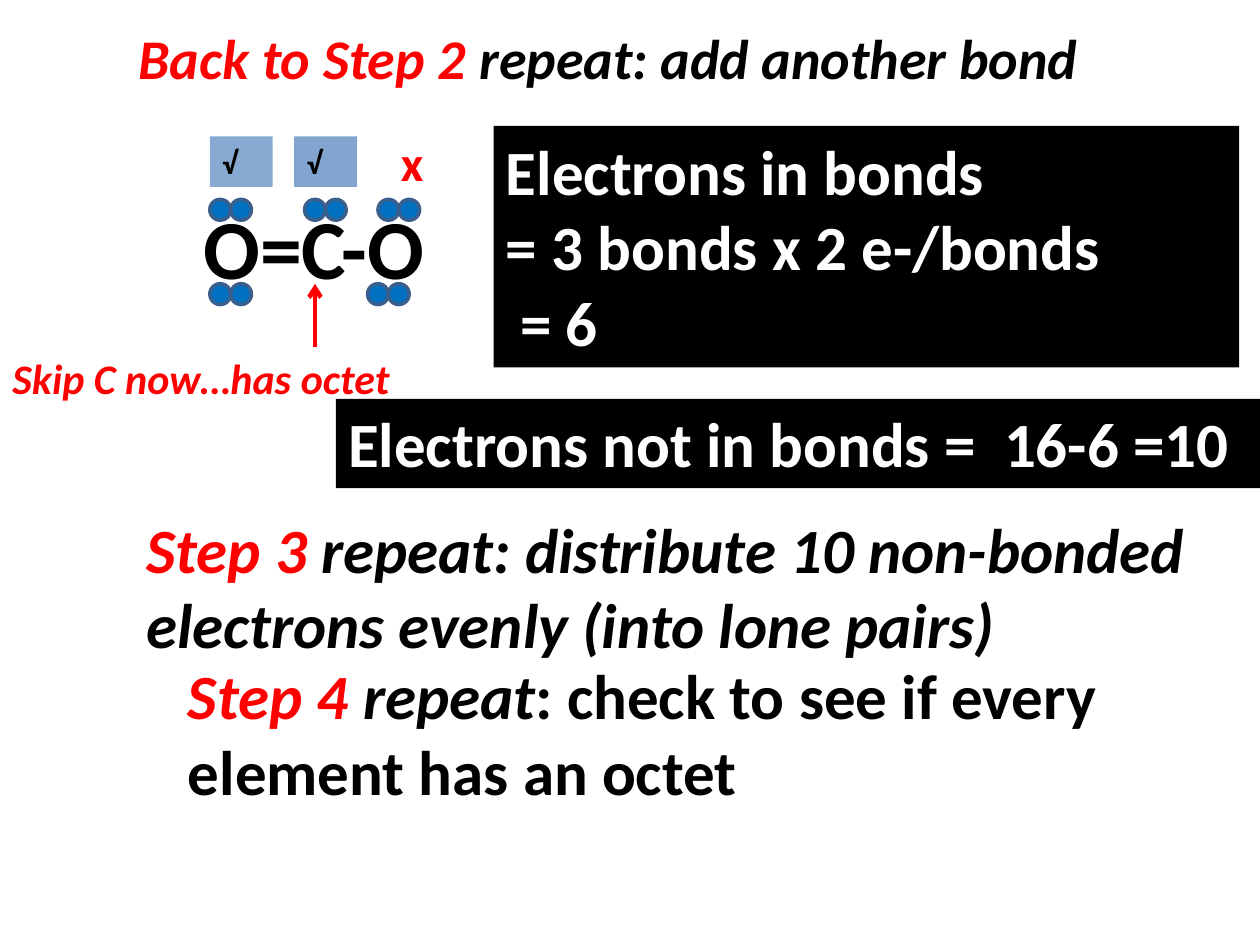
from dataclasses import dataclass

from lxml.etree import SubElement
from pptx import Presentation
from pptx.dml.color import RGBColor
from pptx.enum.shapes import MSO_CONNECTOR as Connector, MSO_SHAPE as Shape
from pptx.enum.text import MSO_ANCHOR as Anchor, MSO_AUTO_SIZE as AutoSize, PP_ALIGN as Align
from pptx.oxml.ns import qn
from pptx.util import Cm, Pt


@dataclass(frozen=True)
class Theme:
    font: str = "Calibri"
    ink: str = "000000"
    paper: str = "FFFFFF"
    accent: str = "FF0000"
    electron: str = "0070C0"
    electron_edge: str = "3A5F8C"
    check: str = "4F81BD"
    formula_size: int = 48
    body_size: int = 36
    title_size: int = 32
    cross_size: int = 28
    note_size: int = 24
    check_size: int = 18


@dataclass(frozen=True)
class Box:
    left: float
    top: float
    width: float
    height: float

    def inner(self, left, top, width, height):
        return Box(self.left + left, self.top + top, width, height)

    def lengths(self):
        return [Cm(v) for v in (self.left, self.top, self.width, self.height)]


THEME = Theme()


def rgb(color):
    return RGBColor.from_string(color)


def write(frame, lines, size, italic=False, anchor=Anchor.TOP):
    frame.word_wrap = True
    frame.auto_size = AutoSize.NONE
    frame.vertical_anchor = anchor
    for index, runs in enumerate(lines):
        paragraph = frame.add_paragraph() if index else frame.paragraphs[0]
        paragraph.alignment = Align.LEFT
        font = paragraph.font
        font.name, font.size, font.bold, font.italic = THEME.font, Pt(size), True, italic
        for text, color, *upright in runs:
            run = paragraph.add_run()
            run.text = text
            run.font.color.rgb = rgb(color)
            if upright:
                run.font.italic = False


def add_text(slide, box, lines, size, italic=False):
    text_box = slide.shapes.add_textbox(*box.lengths())
    write(text_box.text_frame, lines, size, italic)
    return text_box


def add_filled(slide, kind, box, color):
    shape = slide.shapes.add_shape(kind, *box.lengths())
    shape.shadow.inherit = False
    shape.fill.solid()
    shape.fill.fore_color.rgb = rgb(color)
    shape.line.fill.background()
    return shape


def add_title(slide, box):
    title = slide.shapes.title
    title.left, title.top, title.width, title.height = box.lengths()
    write(title.text_frame,
          [[("Back to Step 2 ", THEME.accent), ("repeat: add another bond", THEME.ink)]],
          THEME.title_size, italic=True)


def add_panel(slide, box, lines):
    panel = add_filled(slide, Shape.RECTANGLE, box, THEME.ink)
    write(panel.text_frame, [[(line, THEME.paper)] for line in lines], THEME.body_size)


def add_lone_pair(slide, box):
    for side in range(2):
        electron = add_filled(slide, Shape.OVAL,
                              box.inner(side * box.height, 0, box.height, box.height),
                              THEME.electron)
        electron.line.color.rgb = rgb(THEME.electron_edge)
        electron.line.width = Pt(2)


def add_check(slide, box, opacity):
    check = add_filled(slide, Shape.RECTANGLE, box, THEME.check)
    color = check.fill._xPr.find(qn("a:solidFill"))[0]
    SubElement(color, qn("a:alpha")).set("val", str(opacity * 1000))
    write(check.text_frame, [[("√", THEME.ink)]], THEME.check_size, anchor=Anchor.MIDDLE)


def add_arrow(slide, x, start, end):
    arrow = slide.shapes.add_connector(Connector.STRAIGHT, Cm(x), Cm(start), Cm(x), Cm(end))
    arrow.line.color.rgb = rgb(THEME.accent)
    arrow.line.width = Pt(2.5)
    SubElement(arrow.line._get_or_add_ln(), qn("a:tailEnd")).set("type", "arrow")
    SubElement(arrow._element.spPr, qn("a:effectLst"))


def add_molecule(slide, box):
    formula = add_text(slide, box.inner(3.18, 1.27, 6.99, 2.31),
                       [[("O=C-O", THEME.ink)]], THEME.formula_size)
    formula.text_frame.margin_left = Cm(0.92)

    diameter = 0.42
    for top, lefts in ((1.48, (4.23, 6.14, 7.62)), (3.18, (4.23, 7.41))):
        for left in lefts:
            add_lone_pair(slide, box.inner(left, top, 2 * diameter, diameter))

    for left, opacity in ((4.23, 67), (5.93, 71)):
        add_check(slide, box.inner(left, 0.21, 1.27, 1.02), opacity)
    add_text(slide, box.inner(7.83, 0, 0.85, 1.45), [[("x", THEME.accent)]], THEME.cross_size)

    add_arrow(slide, box.left + 6.35, box.top + 4.45, box.top + 3.18)
    add_text(slide, box.inner(0, 4.45, box.width, 1.27),
             [[("Skip C now…has octet", THEME.accent)]], THEME.note_size, italic=True)


def add_step(slide, box, label, *rest):
    add_text(slide, box, [[(label, THEME.accent), *rest]], THEME.body_size, italic=True)


def main():
    deck = Presentation()
    deck.slide_width, deck.slide_height = Cm(25.4), Cm(19.05)
    slide = deck.slides.add_slide(deck.slide_layouts[5])

    add_title(slide, Box(2.54, 0.35, 20.11, 1.62))
    add_panel(slide, Box(9.95, 2.54, 15.03, 4.87),
              ["Electrons in bonds", "= 3 bonds x 2 e-/bonds", " = 6"])
    add_panel(slide, Box(6.77, 8.04, 18.63, 1.8), ["Electrons not in bonds =  16-6 =10"])
    add_molecule(slide, Box(0, 2.54, 8.69, 5.72))
    add_step(slide, Box(2.7, 10.16, 22.43, 3.33), "Step 3 ",
             ("repeat: distribute 10 non-bonded electrons evenly (into lone pairs)", THEME.ink))
    add_step(slide, Box(3.54, 13.12, 20.75, 3.33), "Step 4 ",
             ("repeat", THEME.ink),
             (": check to see if every element has an octet", THEME.ink, "upright"))

    deck.save("out.pptx")


if __name__ == "__main__":
    main()
